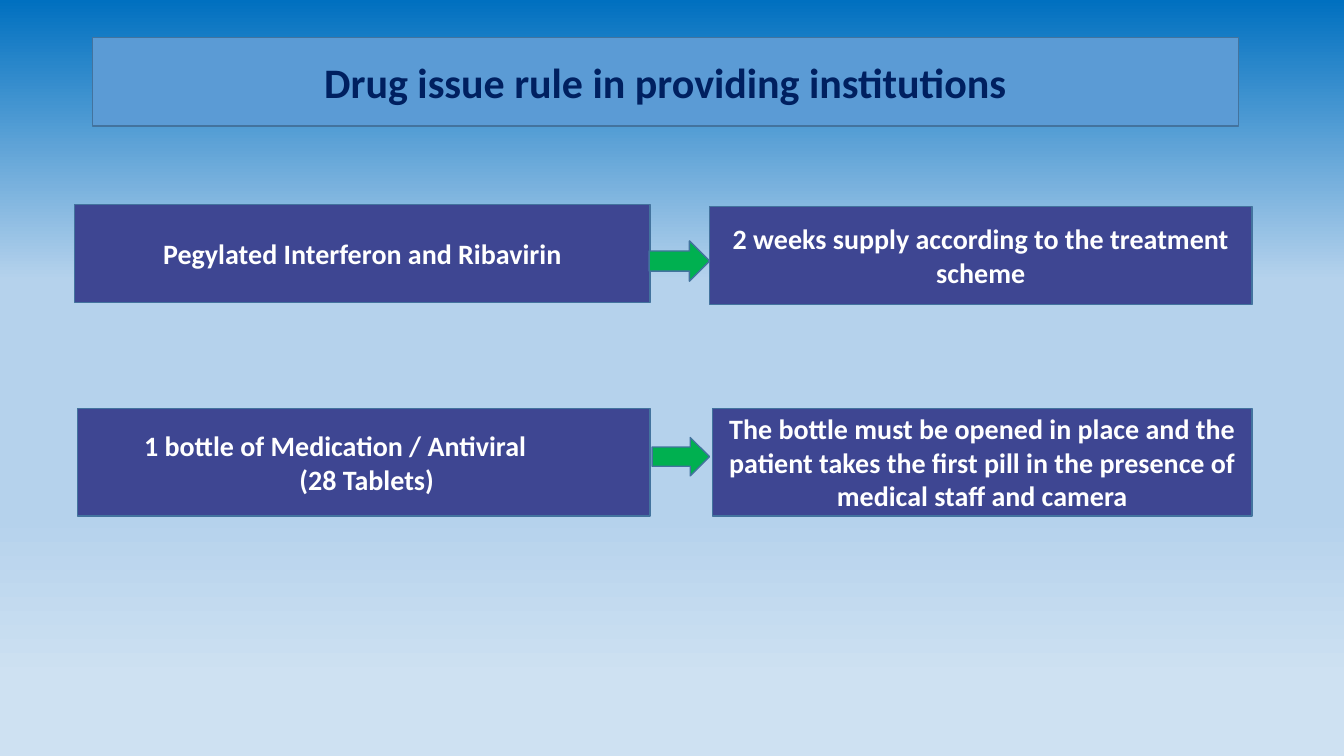
from pptx import Presentation
from pptx.dml.color import RGBColor
from pptx.enum.shapes import MSO_SHAPE
from pptx.enum.text import MSO_ANCHOR, PP_ALIGN
from pptx.oxml.ns import qn
from pptx.util import Pt
from lxml.etree import SubElement

NAVY, INDIGO, BLUE = "002060", "3E4692", "5B9BD5"
GREEN, EDGE, WHITE = "00B050", "43739E", "FFFFFF"
SKY = [(0, "0070C0"), (37, "B5D2EC"), (40, "B5D2EC"), (68, "B5D2EC"), (90, "CEE1F2")]


def color(code):
    return RGBColor.from_string(code)


def shape(slide, kind, box, fill):
    item = slide.shapes.add_shape(kind, *[Pt(n) for n in box])
    item.shadow.inherit = False
    item.fill.solid()
    item.fill.fore_color.rgb = color(fill)
    item.line.color.rgb = color(EDGE)
    item.line.width = Pt(1)
    return item


def panel(slide, box, lines, fill=INDIGO, size=20, ink=WHITE):
    item = shape(slide, MSO_SHAPE.RECTANGLE, box, fill)
    frame = item.text_frame
    frame.word_wrap = True
    frame.vertical_anchor = MSO_ANCHOR.MIDDLE
    for i, line in enumerate(lines):
        para = frame.add_paragraph() if i else frame.paragraphs[0]
        para.alignment = PP_ALIGN.CENTER
        run = para.add_run()
        run.text = line
        font = run.font
        font.name, font.size, font.bold = "Calibri", Pt(size), True
        font.color.rgb = color(ink)
    return frame


def paint(slide):
    fill = slide.background.fill
    fill.gradient()
    fill.gradient_angle = 270
    stops = slide.element.find(".//" + qn("a:gsLst"))
    for stop in list(stops):
        stops.remove(stop)
    for place, code in SKY:
        stop = SubElement(stops, qn("a:gs"), pos=str(place * 1000))
        SubElement(stop, qn("a:srgbClr"), val=code)


def row(slide, box, cause, rule, gap, drop, arrow):
    x, y, w, h = box
    mid = 464.4
    start = mid + gap
    left = panel(slide, (x, y, mid - x, h), cause)
    panel(slide, (start, y + drop, x + w - start, h), rule)
    dx, dy, wide, high = arrow
    shape(slide, MSO_SHAPE.RIGHT_ARROW, (mid + dx, y + dy, wide, high), GREEN)
    return left


def build(slide):
    paint(slide)
    row(slide, (53.3, 146.2, 840.9, 69.8),
        ["Pegylated Interferon and Ribavirin"],
        ["2 weeks supply according to the treatment scheme"],
        42.5, 1.4, (-0.7, 25.9, 43.2, 28.8))
    left = row(slide, (55.4, 291.6, 838.8, 77),
               ["1 bottle of Medication / Antiviral", "(28 Tablets)"],
               ["The bottle must be opened in place and the patient takes "
                "the first pill in the presence of medical staff and camera"],
               44.6, 0, (1.4, 20.9, 41, 27.4))
    left.margin_right = Pt(48)
    left.paragraphs[1]._p.get_or_add_pPr().set("marL", str(Pt(45)))
    panel(slide, (66.2, 26.6, 818.6, 63.4),
          ["Drug issue rule in providing institutions"], BLUE, 30, NAVY)


def main():
    deck = Presentation()
    deck.slide_width, deck.slide_height = Pt(960), Pt(540)
    build(deck.slides.add_slide(deck.slide_layouts[6]))
    deck.save("out.pptx")


if __name__ == "__main__":
    main()
